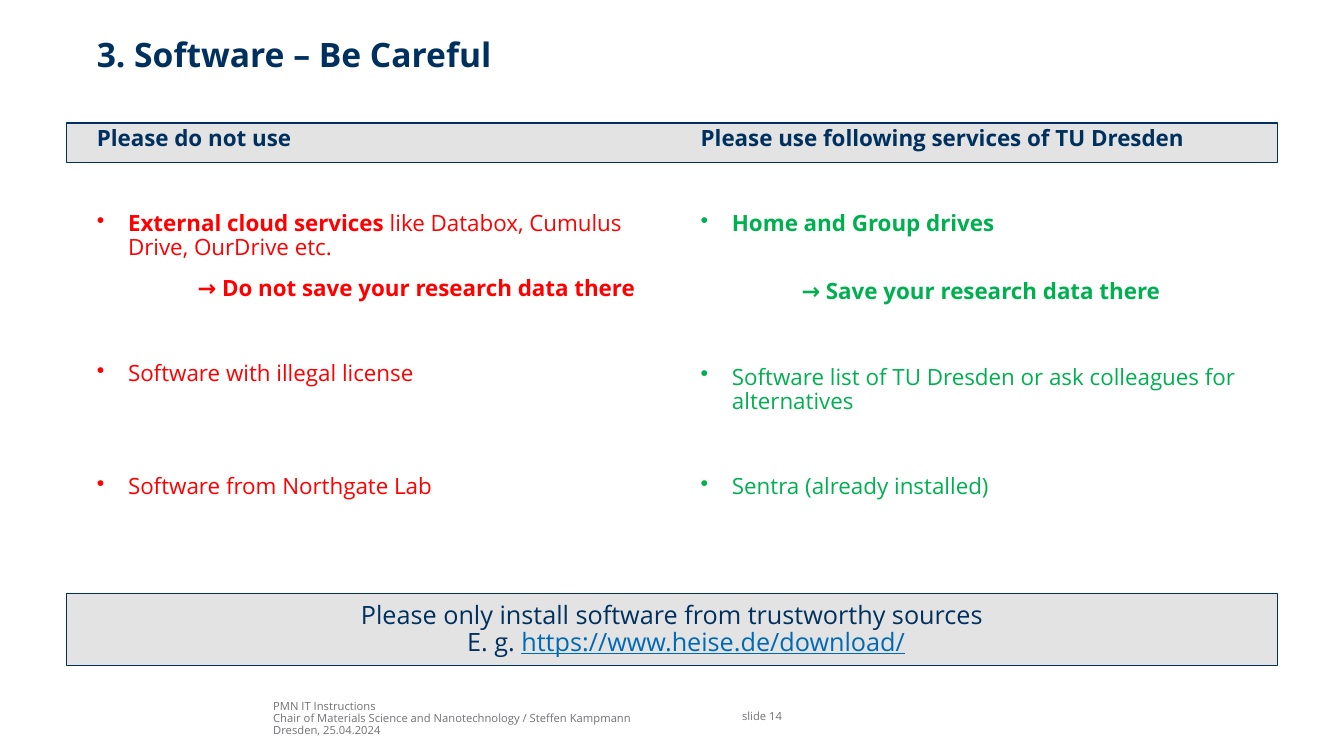
from dataclasses import dataclass

from lxml.etree import SubElement
from pptx import Presentation
from pptx.dml.color import RGBColor
from pptx.enum.shapes import MSO_SHAPE
from pptx.enum.text import MSO_ANCHOR, PP_ALIGN
from pptx.oxml.ns import qn
from pptx.shapes.autoshape import Shape
from pptx.slide import Slide
from pptx.text.text import TextFrame
from pptx.util import Inches, Pt

FONT = "Open Sans"
NAVY, GRAY, PALE = "00305D", "727277", "E3E3E4"
RED, GREEN, LINK = "FF0000", "00B050", "0069B4"
LINE_SPACING = 0.9
LINE = 19.6  # height of one 16 pt line, in points
GAP = 12
ITEM_GAP = 2 * GAP + LINE


@dataclass
class Span:
    text: str
    color: str = NAVY
    bold: bool = False
    underline: bool = False


@dataclass
class Para:
    spans: list[Span]
    before: float = 0
    margin: float = 0
    bullet: bool = False
    align: PP_ALIGN = PP_ALIGN.LEFT


@dataclass
class Column:
    left: float
    width: float
    paras: list[Para]


@dataclass
class Bar:
    top: float
    height: float
    line_width: float
    paras: list[Para]


@dataclass
class Footer:
    left: float
    width: float
    anchor: MSO_ANCHOR
    lines: list[str]


def rgb(color: str) -> RGBColor:
    return RGBColor.from_string(color)


def write(frame: TextFrame, paras: list[Para], size: float) -> None:
    frame.word_wrap = True
    for index, para in enumerate(paras):
        paragraph = frame.add_paragraph() if index else frame.paragraphs[0]
        properties = paragraph._p.get_or_add_pPr()
        properties.set("marL", str(Inches(para.margin)))
        properties.set("indent", str(Inches(-para.margin if para.bullet else 0)))
        if para.bullet:
            SubElement(properties, qn("a:buChar"), char="•")
        paragraph.alignment = para.align
        paragraph.line_spacing = LINE_SPACING
        paragraph.space_before = Pt(para.before)
        for span in para.spans:
            run = paragraph.add_run()
            run.text = span.text
            run.font.name = FONT
            run.font.size = Pt(size)
            run.font.bold = span.bold
            run.font.underline = span.underline
            run.font.color.rgb = rgb(span.color)


def clear_insets(frame: TextFrame) -> None:
    frame.margin_left = frame.margin_top = 0
    frame.margin_right = frame.margin_bottom = 0


def add_text(page: Slide, left: float, top: float, width: float, height: float,
             paras: list[Para], size: float,
             anchor: MSO_ANCHOR = MSO_ANCHOR.TOP) -> None:
    box = page.shapes.add_textbox(Inches(left), Inches(top), Inches(width), Inches(height))
    clear_insets(box.text_frame)
    box.text_frame.vertical_anchor = anchor
    write(box.text_frame, paras, size)


def add_bar(page: Slide, bar: Bar) -> None:
    shape = page.shapes.add_shape(MSO_SHAPE.RECTANGLE, Inches(0.66), Inches(bar.top),
                                  Inches(12.01), Inches(bar.height))
    shape.shadow.inherit = False
    shape.fill.solid()
    shape.fill.fore_color.rgb = rgb(PALE)
    shape.line.color.rgb = rgb(NAVY)
    shape.line.width = Pt(bar.line_width)
    shape.text_frame.vertical_anchor = MSO_ANCHOR.MIDDLE
    write(shape.text_frame, bar.paras, 18)


def format_title(title: Shape) -> None:
    title.left, title.top = Inches(0.96), Inches(0.38)
    title.width, title.height = Inches(11.57), Inches(0.75)
    clear_insets(title.text_frame)
    title.text_frame.vertical_anchor = MSO_ANCHOR.TOP
    write(title.text_frame, [Para([Span("3. Software – Be Careful", bold=True)])], 24)


def heading(text: str) -> Para:
    return Para([Span(text, bold=True)])


def item(*spans: Span, before: float = ITEM_GAP) -> Para:
    return Para(list(spans), before, 0.31, bullet=True)


def advice(text: str, color: str, before: float = GAP) -> Para:
    return Para([Span(text, color, bold=True)], before, 1)


COLUMNS = [
    Column(0.96, 5.71, [
        heading("Please do not use"),
        item(Span("External cloud services ", RED, bold=True),
             Span("like Databox, Cumulus Drive, OurDrive etc.", RED)),
        advice("→ Do not save your research data there", RED),
        item(Span("Software with illegal license", RED)),
        item(Span("Software from Northgate Lab", RED), before=ITEM_GAP + LINE),
    ]),
    Column(6.95, 6.27, [
        heading("Please use following services of TU Dresden"),
        item(Span("Home and Group drives", GREEN, bold=True)),
        advice("→ Save your research data there", GREEN, before=GAP + LINE),
        item(Span("Software list of TU Dresden or ask colleagues for alternatives", GREEN)),
        item(Span("Sentra (already installed)", GREEN)),
    ]),
]

BARS = [
    Bar(1.22, 0.39, 1, []),
    Bar(5.89, 0.71, 0.75, [
        Para([Span("Please only install software from trustworthy sources")],
             align=PP_ALIGN.CENTER),
        Para([Span("E. g. "),
              Span("https://www.heise.de/download/", LINK, underline=True)],
             margin=0.28, align=PP_ALIGN.CENTER),
    ]),
]

FOOTERS = [
    Footer(2.71, 4.5, MSO_ANCHOR.BOTTOM, [
        "PMN IT Instructions",
        "Chair of Materials Science and Nanotechnology / Steffen Kampmann",
        "Dresden, 25.04.2024",
    ]),
    Footer(7.36, 0.77, MSO_ANCHOR.MIDDLE, ["slide 14"]),
]


def main() -> None:
    deck = Presentation()
    deck.slide_width, deck.slide_height = Inches(13.33), Inches(7.5)
    page = deck.slides.add_slide(deck.slide_layouts[5])
    format_title(page.shapes.title)
    for bar in BARS:
        add_bar(page, bar)
    for column in COLUMNS:
        add_text(page, column.left, 1.26, column.width, 4.75, column.paras, 16)
    for footer in FOOTERS:
        paras = [Para([Span(line, GRAY)]) for line in footer.lines]
        add_text(page, footer.left, 6.91, footer.width, 0.4, paras, 8, footer.anchor)
    deck.save("out.pptx")


if __name__ == "__main__":
    main()
